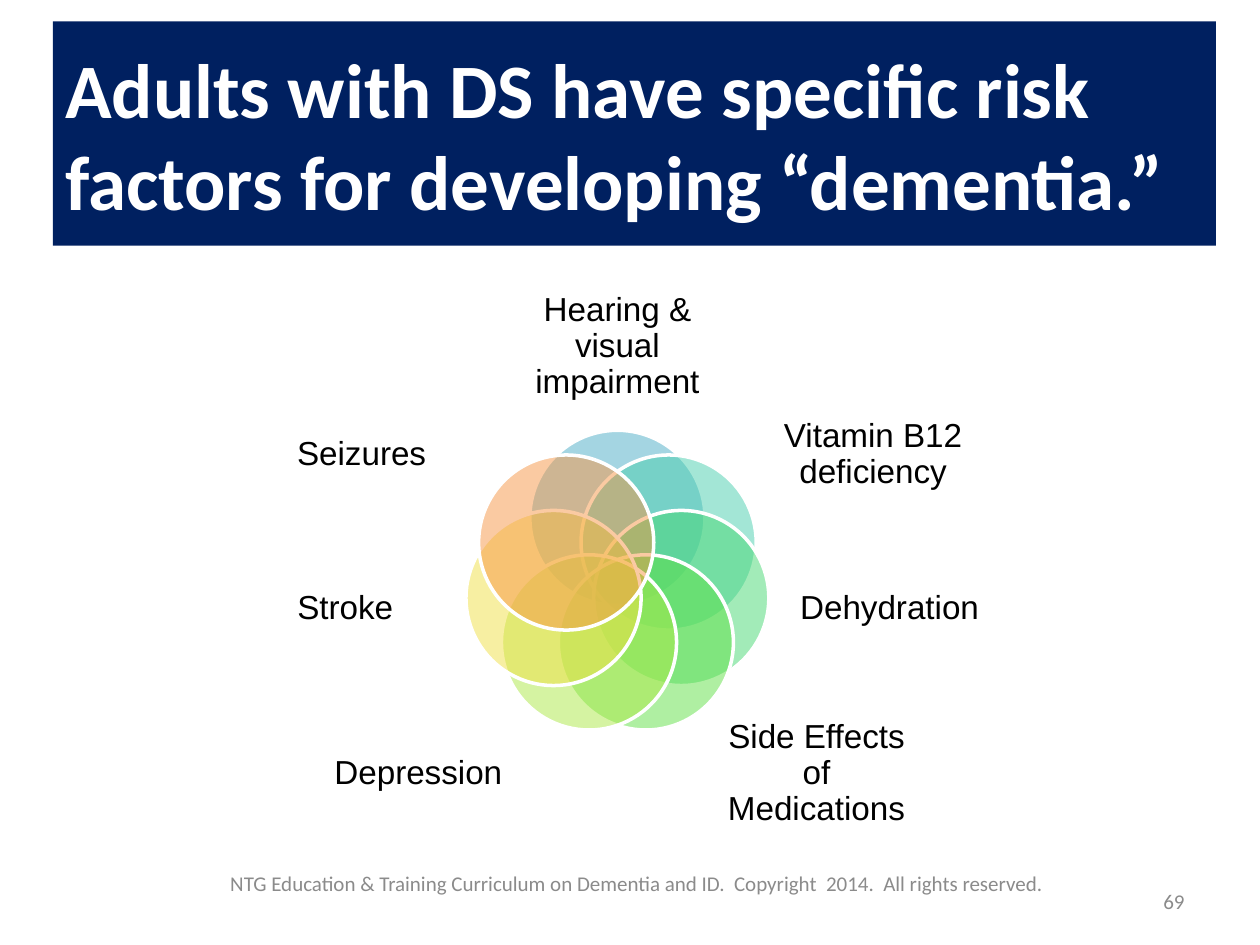
from math import cos, pi, sin

from lxml import etree
from pptx import Presentation
from pptx.dml.color import RGBColor
from pptx.enum.shapes import MSO_SHAPE
from pptx.enum.text import MSO_ANCHOR, PP_ALIGN
from pptx.oxml.ns import qn
from pptx.util import Inches, Pt

RECTANGLE, OVAL = MSO_SHAPE.RECTANGLE, MSO_SHAPE.OVAL
MIDDLE = MSO_ANCHOR.MIDDLE
LEFT, CENTER, RIGHT = PP_ALIGN.LEFT, PP_ALIGN.CENTER, PP_ALIGN.RIGHT

TITLE = "Adults with DS have specific risk factors for developing “dementia.”"
FOOTER = ("NTG Education & Training Curriculum on Dementia and ID.  "
          "Copyright  2014.  All rights reserved.")
PAGE_NUMBER = "69"

# Clockwise from the top: label, circle colour, label row, side of the ring
RISK_FACTORS = [
    ("Hearing & visual impairment", "4BACC6", "top", 0),
    ("Vitamin B12 deficiency", "49CFAE", "upper", 1),
    ("Dehydration", "47D872", "middle", 1),
    ("Side Effects of Medications", "60E146", "bottom", 1),
    ("Depression", "ACE946", "bottom", -1),
    ("Stroke", "F0E146", "middle", -1),
    ("Seizures", "F79646", "upper", -1),
]
# Distance from the ring's axis, top, width, height
LABEL_ROWS = {
    "top": (0, 2.33, 1.59, 0.85),
    "upper": (2.03, 3.14, 1.5, 0.94),
    "middle": (2.16, 4.33, 1.48, 1),
    "bottom": (1.58, 5.68, 1.59, 0.92),
}
RING_X, RING_Y, RING_RADIUS = 4.9, 4.63, 0.52
DIAMETER = 1.39

TITLE_FONT = {"name": "Calibri", "size": Pt(44), "bold": True}
FOOTER_FONT = {"name": "Calibri", "size": Pt(12)}
LABEL_FONT = {"name": "Arial", "size": Pt(19)}
LABEL_PARAGRAPH = {"line_spacing": 0.9}
NO_MARGINS = dict.fromkeys(
    ("margin_left", "margin_top", "margin_right", "margin_bottom"), 0)


def color(value):
    return RGBColor.from_string(value)


def set_all(target, values):
    for name, value in values.items():
        setattr(target, name, value)


def write(shape, text, font, font_color, alignment, frame={}, spacing={}):
    text_frame = shape.text_frame
    set_all(text_frame, {"word_wrap": True, "vertical_anchor": MIDDLE, **frame})
    paragraph = text_frame.paragraphs[0]
    set_all(paragraph, {"text": text, "alignment": alignment, **spacing})
    set_all(paragraph.font, font)
    paragraph.font.color.rgb = color(font_color)


def add_text(slide, box, *content):
    write(slide.shapes.add_textbox(*map(Inches, box)), *content)


def add_filled(slide, kind, box, fill):
    shape = slide.shapes.add_shape(kind, *map(Inches, box))
    shape.shadow.inherit = False
    shape.fill.solid()
    shape.fill.fore_color.rgb = color(fill)
    shape.line.fill.background()
    return shape


def add_circle(slide, position, fill):
    """Add a half-transparent circle at its place on the ring."""
    angle = 2 * pi * position / len(RISK_FACTORS)
    left = RING_X + RING_RADIUS * sin(angle) - DIAMETER / 2
    top = RING_Y - RING_RADIUS * cos(angle) - DIAMETER / 2
    circle = add_filled(slide, OVAL, (left, top, DIAMETER, DIAMETER), fill)
    fill_color = circle.fill._xPr.find(qn("a:solidFill"))[0]
    etree.SubElement(fill_color, qn("a:alpha"), val="50000")
    circle.line.color.rgb = color("FFFFFF")
    circle.line.width = Pt(2)


def add_label(slide, text, row, side):
    distance, top, width, height = LABEL_ROWS[row]
    left = RING_X + side * distance - width / 2
    add_text(slide, (left, top, width, height), text, LABEL_FONT, "000000",
             CENTER, NO_MARGINS, LABEL_PARAGRAPH)


def main():
    presentation = Presentation()
    presentation.slide_width, presentation.slide_height = Inches(10), Inches(7.5)
    slide = presentation.slides.add_slide(presentation.slide_layouts[6])

    banner = add_filled(slide, RECTANGLE, (0.42, 0.17, 9.23, 1.78), "002060")
    write(banner, TITLE, TITLE_FONT, "FFFFFF", LEFT)
    add_text(slide, (1.36, 6.81, 7.39, 0.4), FOOTER, FOOTER_FONT, "8B8B8B", CENTER)
    add_text(slide, (7.17, 6.95, 2.33, 0.4), PAGE_NUMBER, FOOTER_FONT, "8B8B8B", RIGHT)

    for position, (text, fill, row, side) in enumerate(RISK_FACTORS):
        add_circle(slide, position, fill)
        add_label(slide, text, row, side)

    presentation.save("out.pptx")


if __name__ == "__main__":
    main()
